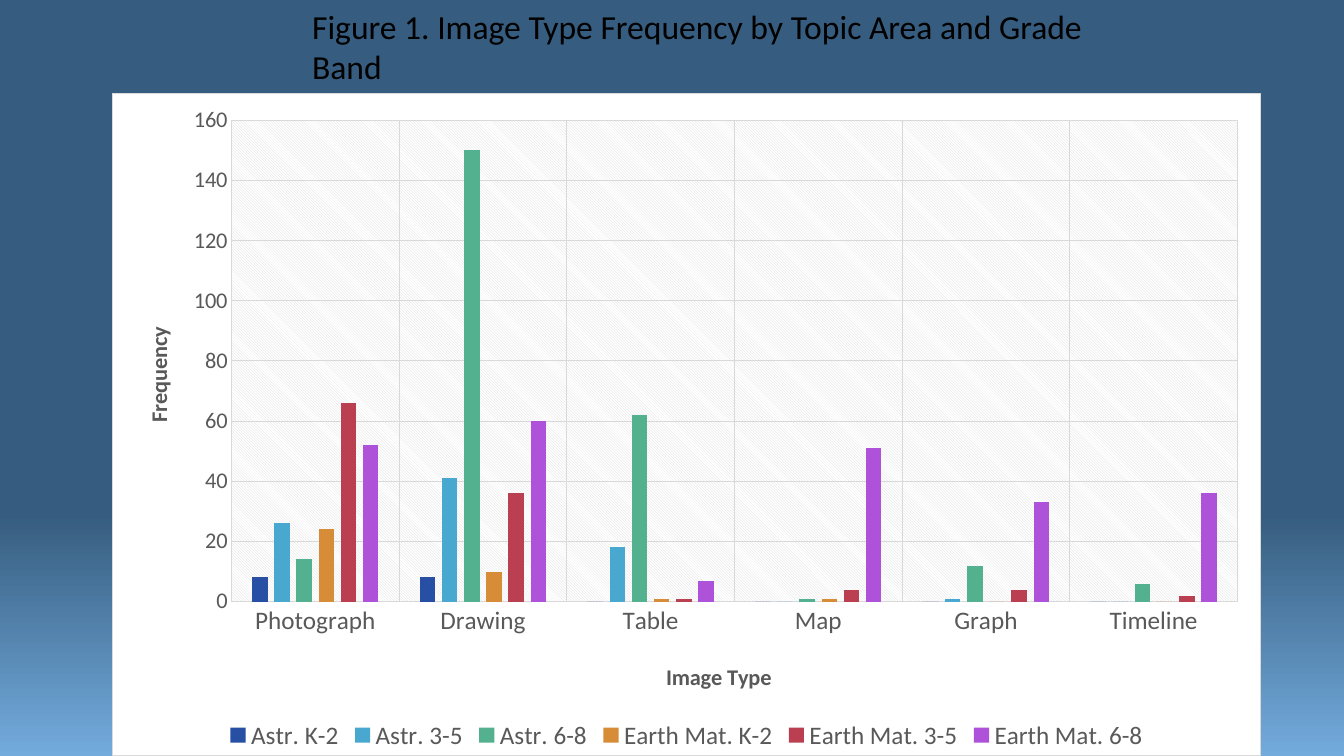
from lxml.etree import SubElement
from pptx import Presentation
from pptx.chart.data import CategoryChartData
from pptx.dml.color import RGBColor
from pptx.enum.chart import XL_CHART_TYPE, XL_LEGEND_POSITION, XL_TICK_MARK
from pptx.enum.text import MSO_ANCHOR, MSO_AUTO_SIZE, PP_ALIGN
from pptx.oxml import parse_xml
from pptx.oxml.ns import nsdecls, qn
from pptx.util import Pt

EMU_PER_PX = 914400 / 100.8
SLIDE_SIZE = (1344, 756)
TITLE_BOX = (302, 1, 809, 92)
CHART_BOX = (112, 93, 1149, 663)
PLOT_BOX = (119, 27, 1007, 482)  # inside the chart


class Theme:
    font = "Calibri"
    sky = [(0.68, "365D7F"), (1.0, "73ABDD")]
    black, gray, rule, white = "000000", "595959", "D9D9D9", "FFFFFF"
    title, label, value, axis_title = 24, 18, 16, 16
    rule_width = 0.75


CATEGORIES = ["Photograph", "Drawing", "Table", "Map", "Graph", "Timeline"]
SERIES = [
    ("Astr. K-2", "274FA4", (8, 8, 0, 0, 0, 0)),
    ("Astr. 3-5", "48A8D0", (26, 41, 18, 0, 1, 0)),
    ("Astr. 6-8", "53B18F", (14, 150, 62, 1, 12, 6)),
    ("Earth Mat. K-2", "D78D38", (24, 10, 1, 1, 0, 0)),
    ("Earth Mat. 3-5", "BA3F51", (66, 36, 1, 4, 4, 2)),
    ("Earth Mat. 6-8", "AE52D9", (52, 60, 7, 51, 33, 36)),
]


def px(n):
    return round(n * EMU_PER_PX)


def apply(obj, **values):
    for name, value in values.items():
        setattr(obj, name, value)


def set_font(font, size, color, bold=False):
    apply(font, name=Theme.font, size=Pt(size), bold=bold)
    font.color.rgb = RGBColor.from_string(color)


def set_rule(line):
    line.color.rgb = RGBColor.from_string(Theme.rule)
    line.width = Pt(Theme.rule_width)


def set_background(slide):
    fill = slide.background.fill
    fill.gradient()
    fill.gradient_angle = 270
    for stop, (position, color) in zip(fill.gradient_stops, Theme.sky):
        stop.position = position
        stop.color.rgb = RGBColor.from_string(color)


def add_title(slide, text):
    sp = slide.shapes.title
    apply(sp, **dict(zip(("left", "top", "width", "height"), map(px, TITLE_BOX))))
    tf = sp.text_frame
    apply(tf, word_wrap=True, auto_size=MSO_AUTO_SIZE.SHAPE_TO_FIT_TEXT,
          vertical_anchor=MSO_ANCHOR.TOP)
    p = tf.paragraphs[0]
    p.alignment = PP_ALIGN.LEFT
    r = p.add_run()
    r.text = text
    set_font(r.font, Theme.title, Theme.black)


def place(parent, index, x, y, w=None, h=None):
    """Fix the place of a chart part, given in px inside the chart."""
    for old in parent.findall(qn("c:layout")):
        parent.remove(old)
    layout = parse_xml(f"<c:layout {nsdecls('c')}><c:manualLayout/></c:layout>")
    values = {"xMode": "edge", "yMode": "edge",
              "x": x / CHART_BOX[2], "y": y / CHART_BOX[3]}
    if w:
        values = {"layoutTarget": "inner", **values,
                  "w": w / CHART_BOX[2], "h": h / CHART_BOX[3]}
    for name, value in values.items():
        SubElement(layout[0], qn(f"c:{name}")).set("val", str(value))
    parent.insert(index, layout)


def format_axis(axis, title, size, title_at, rotation):
    apply(axis, has_major_gridlines=True, major_tick_mark=XL_TICK_MARK.NONE,
          minor_tick_mark=XL_TICK_MARK.NONE)
    set_rule(axis.major_gridlines.format.line)
    set_font(axis.tick_labels.font, size, Theme.gray)
    tf = axis.axis_title.text_frame
    r = tf.paragraphs[0].add_run()
    r.text = title
    set_font(r.font, Theme.axis_title, Theme.gray, bold=True)
    body = tf.paragraphs[0]._p.getparent().find(qn("a:bodyPr"))
    body.set("rot", str(rotation))
    body.set("vert", "horz")
    place(axis.axis_title._element, 1, *title_at)


def fill_areas(chart):
    """White chart area with a thin border; hatched plot area."""
    space = chart._chartSpace
    space.chart.addnext(parse_xml(
        f'<c:spPr {nsdecls("c", "a")}>'
        f'<a:solidFill><a:srgbClr val="{Theme.white}"/></a:solidFill>'
        f'<a:ln w="{Pt(Theme.rule_width)}"><a:solidFill>'
        f'<a:srgbClr val="{Theme.rule}"/></a:solidFill></a:ln></c:spPr>'))
    plot_area = space.chart.plotArea
    plot_area.append(parse_xml(
        f'<c:spPr {nsdecls("c", "a")}><a:pattFill prst="ltDnDiag">'
        f'<a:fgClr><a:srgbClr val="{Theme.rule}"/></a:fgClr>'
        f'<a:bgClr><a:srgbClr val="{Theme.white}"/></a:bgClr>'
        f'</a:pattFill><a:ln><a:noFill/></a:ln></c:spPr>'))
    place(plot_area, 0, *PLOT_BOX)


def add_frequency_chart(slide):
    data = CategoryChartData()
    data.categories = CATEGORIES
    for name, _, values in SERIES:
        data.add_series(name, values)
    chart = slide.shapes.add_chart(
        XL_CHART_TYPE.COLUMN_CLUSTERED, *map(px, CHART_BOX), data).chart
    apply(chart, has_title=False, has_legend=True)
    set_font(chart.font, 10, Theme.black)

    # Columns
    plot = chart.plots[0]
    apply(plot, gap_width=267, overlap=-43, vary_by_categories=False)
    for series, (_, color, _) in zip(plot.series, SERIES):
        series.format.fill.solid()
        series.format.fill.fore_color.rgb = RGBColor.from_string(color)

    # Axes
    format_axis(chart.category_axis, "Image Type", Theme.label, (550, 565), 0)
    set_rule(chart.category_axis.format.line)
    format_axis(chart.value_axis, "Frequency", Theme.value, (27, 230), -5400000)
    apply(chart.value_axis, minimum_scale=0, maximum_scale=160, major_unit=20)
    chart.value_axis.format.line.fill.background()

    # Legend
    apply(chart.legend, position=XL_LEGEND_POSITION.BOTTOM, include_in_layout=False)
    set_font(chart.legend.font, Theme.label, Theme.gray)
    fill_areas(chart)


def main():
    prs = Presentation()
    prs.slide_width, prs.slide_height = map(px, SLIDE_SIZE)
    slide = prs.slides.add_slide(prs.slide_layouts[5])
    set_background(slide)
    add_frequency_chart(slide)
    add_title(slide, "Figure 1. Image Type Frequency by Topic Area and Grade Band")
    prs.save("out.pptx")


if __name__ == "__main__":
    main()
